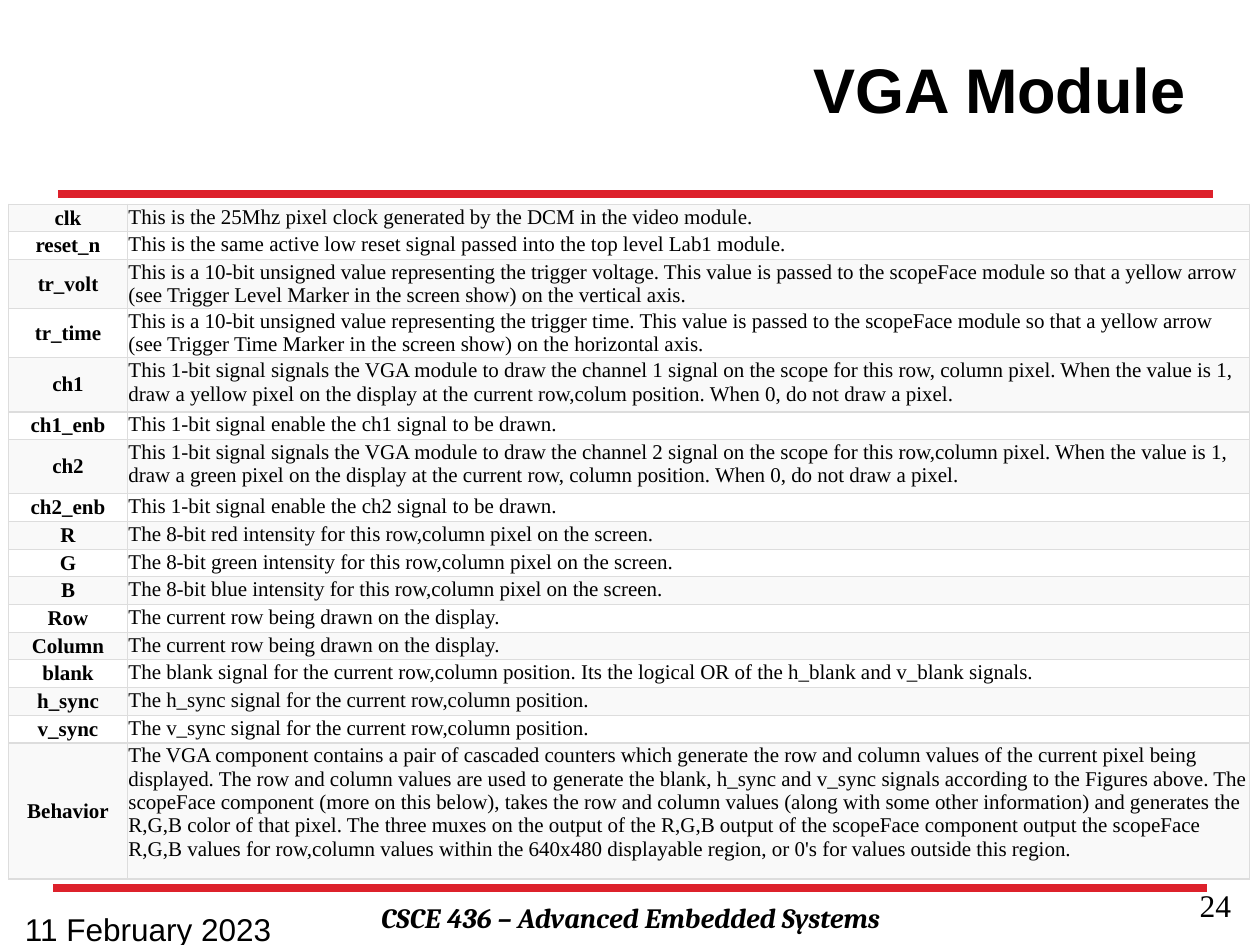
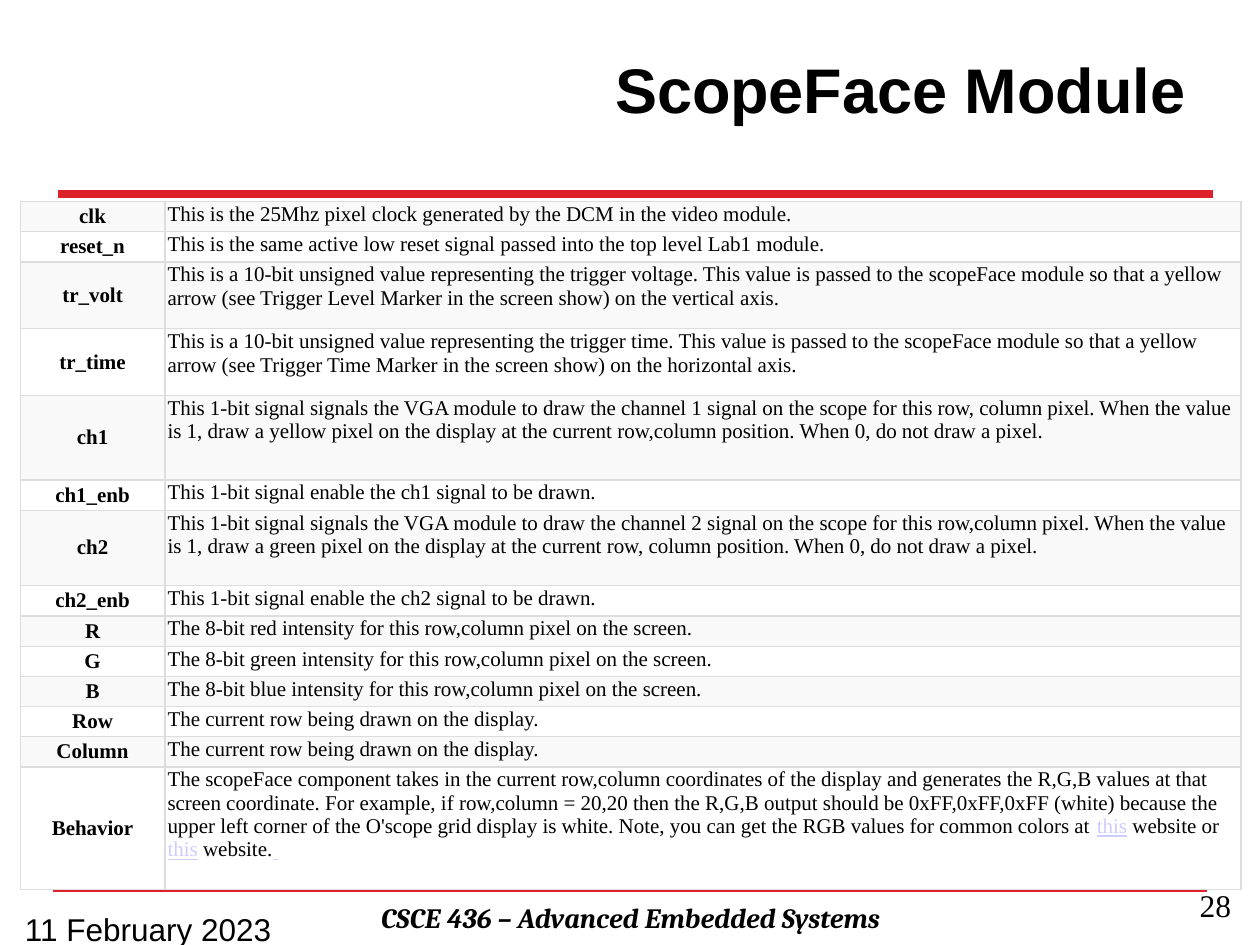
from dataclasses import dataclass
from typing import NamedTuple

from lxml.etree import SubElement
from pptx import Presentation
from pptx.dml.color import RGBColor
from pptx.enum.shapes import MSO_CONNECTOR
from pptx.enum.text import MSO_ANCHOR, PP_ALIGN
from pptx.oxml.ns import qn
from pptx.slide import Slide
from pptx.table import _Cell
from pptx.text.text import TextFrame, _Paragraph
from pptx.util import Inches, Pt


class Face(NamedTuple):
    name: str
    size: int
    bold: bool = False
    slant: bool = False


@dataclass(frozen=True)
class Theme:
    ink: str = "000000"
    rule: str = "DD212B"
    edge: str = "DDDDDD"
    link: str = "CCCCFF"
    bands: tuple[str, str] = ("F9F9F9", "FFFFFF")
    rule_width: float = 4.5
    edge_width: float = 0.75
    title: Face = Face("Arial", 36, True)
    course: Face = Face("Cambria", 16, True, True)
    date: Face = Face("Arial", 18)
    page: Face = Face("Times New Roman", 18)
    label: Face = Face("Times New Roman", 12, True)
    body: Face = Face("Times New Roman", 12)


class Box(NamedTuple):
    left: float
    top: float
    width: float
    height: float

    def place(self) -> list[Inches]:
        return [Inches(side) for side in self]


class Rule(NamedTuple):
    left: float
    right: float
    top: float


class Label(NamedTuple):
    text: str
    box: Box
    face: Face
    align: PP_ALIGN


class Signal(NamedTuple):
    name: str
    words: tuple[str, ...]


class Module(NamedTuple):
    title: str
    page: str
    box: Box
    first: float
    inset: float
    height: float
    tall: dict[str, float]
    rows: list[Signal]


THEME = Theme()
TITLE_BOX = Box(2.09, 0.08, 7.42, 1.25)
PAGE_BOX = Box(7.54, 6.98, 2.33, 0.52)
RULES = [Rule(0.42, 9.58, 7.05), Rule(0.46, 9.63, 1.54)]
FOOTERS = [
    Label("CSCE 436 – Advanced Embedded Systems", Box(1.42, 7.1, 7.17, 0.37),
          THEME.course, PP_ALIGN.CENTER),
    Label("11 February 2023", Box(0.1, 7.17, 2.33, 0.33),
          THEME.date, PP_ALIGN.LEFT),
]


def trigger(name: str, kind: str, marker: str, axis: str) -> Signal:
    return Signal(name, (
        f"This is a 10-bit unsigned value representing the trigger {kind}. "
        "This value is passed to the scopeFace module so that a yellow arrow "
        f"(see Trigger {marker} Marker in the screen show) on the {axis} axis.",))


def channel(number: int, pixel: str, color: str, place: str) -> list[Signal]:
    name = f"ch{number}"
    return [
        Signal(name, (
            f"This 1-bit signal signals the VGA module to draw the channel {number} "
            f"signal on the scope for this {pixel} pixel. When the value is 1, "
            f"draw a {color} pixel on the display at the current {place} position. "
            "When 0, do not draw a pixel.",)),
        Signal(f"{name}_enb", (f"This 1-bit signal enable the {name} signal to be drawn.",)),
    ]


def inputs(place: str) -> list[Signal]:
    return [
        Signal("clk", ("This is the 25Mhz pixel clock generated by the DCM in the video module.",)),
        Signal("reset_n", ("This is the same active low reset signal passed into "
                           "the top level Lab1 module.",)),
        trigger("tr_volt", "voltage", "Level", "vertical"),
        trigger("tr_time", "time", "Time", "horizontal"),
        *channel(1, "row, column", "yellow", place),
        *channel(2, "row,column", "green", "row, column"),
        *(Signal(color[0].upper(),
                 (f"The 8-bit {color} intensity for this row,column pixel on the screen.",))
          for color in ("red", "green", "blue")),
        *(Signal(name, ("The current row being drawn on the display.",))
          for name in ("Row", "Column")),
    ]


MODULES = [
    Module(
        "VGA Module", "24", Box(0.07, 1.62, 9.85, 5.34), 0.94, 0.01, 0.22,
        {"tr_volt": 0.38, "tr_time": 0.38, "ch1": 0.43, "ch2": 0.43, "Behavior": 1.08},
        [
            *inputs("row,colum"),
            Signal("blank", ("The blank signal for the current row,column position. "
                             "Its the logical OR of the h_blank and v_blank signals.",)),
            *(Signal(name, (f"The {name} signal for the current row,column position.",))
              for name in ("h_sync", "v_sync")),
            Signal("Behavior", (
                "The VGA component contains a pair of cascaded counters which generate "
                "the row and column values of the current pixel being displayed. "
                "The row and column values are used to generate the blank, h_sync and "
                "v_sync signals according to the Figures above. The scopeFace component "
                "(more on this below), takes the row and column values (along with some "
                "other information) and generates the R,G,B color of that pixel. The three "
                "muxes on the output of the R,G,B output of the scopeFace component output "
                "the scopeFace R,G,B values for row,column values within the 640x480 "
                "displayable region, or 0's for values outside this region.",)),
        ]),
    Module(
        "ScopeFace Module", "28", Box(0.16, 1.6, 9.69, 5.46), 1.15, 0.02, 0.24,
        {"tr_volt": 0.53, "tr_time": 0.53, "ch1": 0.67, "ch2": 0.6, "Behavior": 0.97},
        [
            *inputs("row,column"),
            Signal("Behavior", (
                "The scopeFace component takes in the current row,column coordinates of the "
                "display and generates the R,G,B values at that screen coordinate. For "
                "example, if row,column = 20,20 then the R,G,B output should be "
                "0xFF,0xFF,0xFF (white) because the upper left corner of the O'scope grid "
                "display is white. Note, you can get the RGB values for common colors at ",
                "this", " website or ", "this", " website.", " ")),
        ]),
]


def paint(color: str) -> RGBColor:
    return RGBColor.from_string(color)


def style(para: _Paragraph, face: Face, align: PP_ALIGN) -> None:
    para.alignment = align
    para.space_before = Pt(0)
    font = para.font
    font.name, font.size = face.name, Pt(face.size)
    font.bold, font.italic = face.bold, face.slant
    font.color.rgb = paint(THEME.ink)


def write(frame: TextFrame, words: tuple[str, ...], face: Face, align: PP_ALIGN) -> None:
    para = frame.paragraphs[0]
    style(para, face, align)
    for index, text in enumerate(words):
        run = para.add_run()
        run.text = text
        if index % 2:
            run.font.color.rgb = paint(THEME.link)
            run.font.underline = True


def add_label(slide: Slide, label: Label) -> None:
    frame = slide.shapes.add_textbox(*label.box.place()).text_frame
    frame.word_wrap = True
    write(frame, (label.text,), label.face, label.align)


def add_rule(slide: Slide, rule: Rule) -> None:
    line = slide.shapes.add_connector(
        MSO_CONNECTOR.STRAIGHT, Inches(rule.left), Inches(rule.top),
        Inches(rule.right), Inches(rule.top))
    line.line.color.rgb = paint(THEME.rule)
    line.line.width = Pt(THEME.rule_width)
    SubElement(line._element.spPr, qn("a:effectLst"))


def add_edges(cell: _Cell) -> None:
    props = cell._tc.get_or_add_tcPr()
    for side in "LRTB":
        edge = SubElement(props, qn(f"a:ln{side}"), w=str(Pt(THEME.edge_width)))
        fill = SubElement(edge, qn("a:solidFill"))
        SubElement(fill, qn("a:srgbClr"), val=THEME.edge)


def fill_cell(cell: _Cell, words: tuple[str, ...], head: bool, band: str, inset: float) -> None:
    add_edges(cell)
    cell.fill.solid()
    cell.fill.fore_color.rgb = paint(band)
    cell.margin_left = cell.margin_right = Inches(inset)
    cell.margin_top = cell.margin_bottom = Inches(0.01)
    cell.vertical_anchor = MSO_ANCHOR.MIDDLE if head else MSO_ANCHOR.TOP
    face = THEME.label if head else THEME.body
    write(cell.text_frame, words, face, PP_ALIGN.CENTER if head else PP_ALIGN.LEFT)


def add_grid(slide: Slide, module: Module) -> None:
    grid = slide.shapes.add_table(len(module.rows), 2, *module.box.place()).table
    grid.first_row = grid.horz_banding = False
    grid.columns[0].width = Inches(module.first)
    grid.columns[1].width = Inches(module.box.width - module.first)
    for index, signal in enumerate(module.rows):
        grid.rows[index].height = Inches(module.tall.get(signal.name, module.height))
        band = THEME.bands[index % 2]
        fill_cell(grid.cell(index, 0), (signal.name,), True, band, module.inset)
        fill_cell(grid.cell(index, 1), signal.words, False, band, module.inset)


def add_title(slide: Slide, text: str) -> None:
    title = slide.shapes.title
    title.left, title.top, title.width, title.height = TITLE_BOX.place()
    title.text_frame.vertical_anchor = MSO_ANCHOR.MIDDLE
    write(title.text_frame, (text,), THEME.title, PP_ALIGN.RIGHT)


def main() -> None:
    deck = Presentation()
    deck.slide_width, deck.slide_height = Inches(10), Inches(7.5)
    for module in MODULES:
        slide = deck.slides.add_slide(deck.slide_layouts[5])
        add_title(slide, module.title)
        for rule in RULES:
            add_rule(slide, rule)
        add_grid(slide, module)
        page = Label(module.page, PAGE_BOX, THEME.page, PP_ALIGN.RIGHT)
        for label in [*FOOTERS, page]:
            add_label(slide, label)
    deck.save("out.pptx")


if __name__ == "__main__":
    main()
